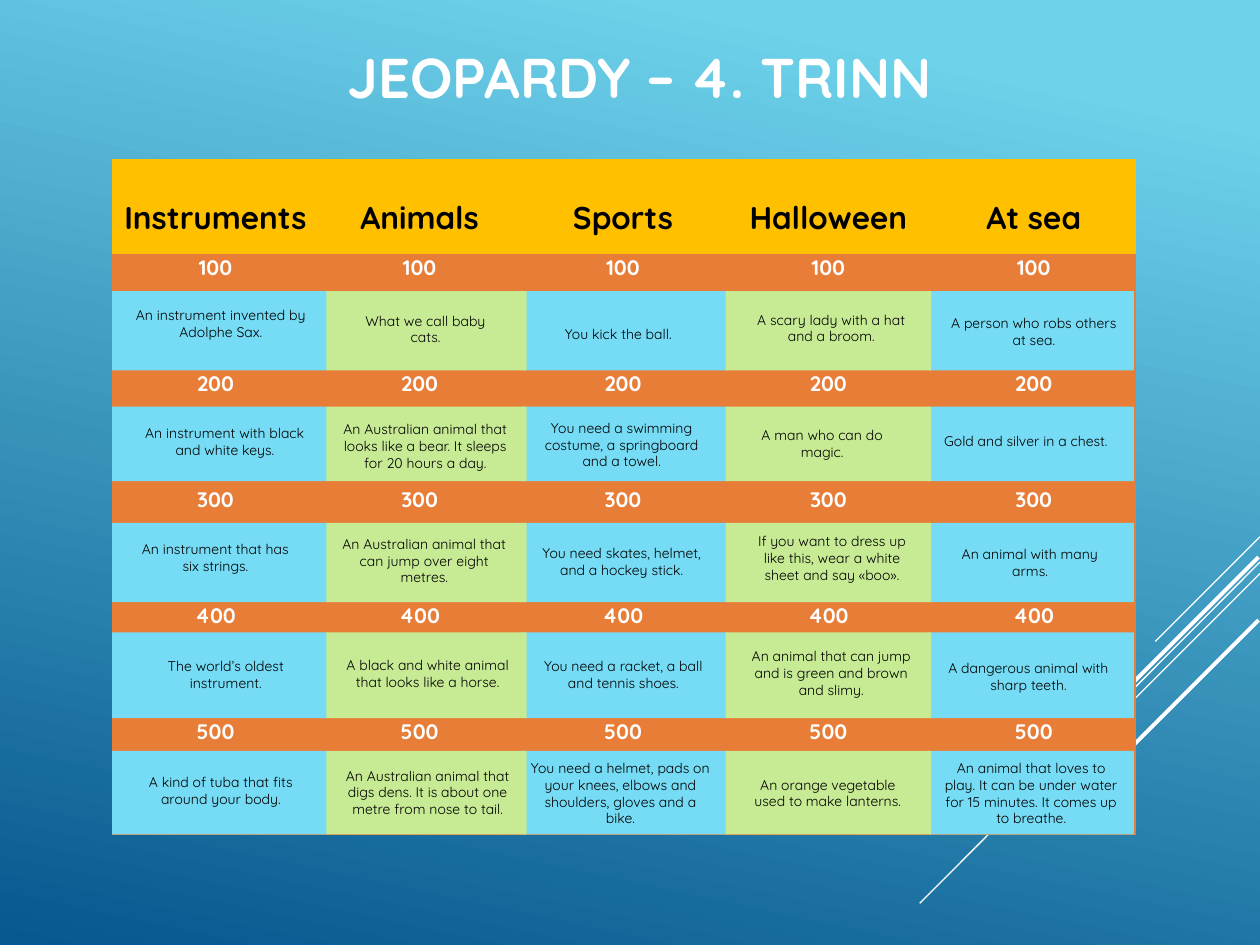
from lxml import etree
from pptx import Presentation
from pptx.dml.color import RGBColor
from pptx.enum.shapes import MSO_CONNECTOR, MSO_SHAPE
from pptx.enum.text import MSO_ANCHOR, MSO_AUTO_SIZE, PP_ALIGN
from pptx.oxml.ns import qn
from pptx.util import Cm, Pt

RECTANGLE = MSO_SHAPE.RECTANGLE
STRAIGHT = MSO_CONNECTOR.STRAIGHT
CENTER = PP_ALIGN.CENTER
MIDDLE = MSO_ANCHOR.MIDDLE
GROW = MSO_AUTO_SIZE.SHAPE_TO_FIT_TEXT

WHITE = RGBColor(0xFF, 0xFF, 0xFF)
BLACK = RGBColor(0x00, 0x00, 0x00)
SKY = RGBColor(0x6E, 0xD2, 0xEB)
DEEP_BLUE = RGBColor(0x06, 0x58, 0x8E)
YELLOW = RGBColor(0xFF, 0xC0, 0x00)
ORANGE = RGBColor(0xE8, 0x7D, 0x37)
CYAN = RGBColor(0x76, 0xDB, 0xF4)
GREEN = RGBColor(0xC7, 0xEA, 0x94)

FONT = "Quicksand"
PLAIN_TABLE_STYLE = "{2D5ABB26-0587-4C30-8999-92F81FD0307C}"

# Diagonal streaks: x1, y1, x2, y2 in cm, width in points
STREAKS = [
    (25.4, 10.82, 23.29, 12.93, 0.75),
    (25.4, 11.33, 18.54, 18.21, 0.75),
    (25.4, 11.56, 21.03, 15.93, 0.75),
    (25.37, 11.23, 21.39, 15.21, 2.25),
    (25.37, 12.5, 22.48, 15.39, 2.25),
]

POINTS = ["100", "200", "300", "400", "500"]
TABLE_COLUMNS = [4.17, 4.06, 4.14, 4.14, 4.14]
TABLE_ROWS = [1.93] + [2.34] * len(POINTS)

# Top and height of the cards for each number of points
CARD_ROWS = [(5.87, 1.6), (8.2, 1.5), (10.54, 1.6), (12.75, 1.73), (15.14, 1.68)]

# Category: card left, card width, card colour,
# clues as (left, top, width, number of lines, text)
CATEGORIES = {
    "Instruments": (2.26, 4.34, CYAN, [
        (2.36, 6.05, 4.19, 2, "An instrument invented by Adolphe Sax."),
        (2.44, 8.43, 4.19, 2, "An instrument with black and white keys."),
        (2.44, 10.77, 3.81, 2, "An instrument that has six strings."),
        (2.46, 13.13, 4.19, 2, "The world’s oldest instrument."),
        (2.36, 15.47, 4.19, 2, "A kind of tuba that fits around your body."),
    ]),
    "Animals": (6.58, 4.04, GREEN, [
        (6.88, 6.17, 3.4, 2, "What we call baby cats."),
        (6.48, 8.36, 4.19, 3, "An Australian animal that looks like a bear. "
                              "It sleeps for 20 hours a day."),
        (6.5, 10.67, 4.11, 3, "An Australian animal that can jump over eight metres."),
        (6.53, 13.11, 4.19, 2, "A black and white animal that looks like a horse."),
        (6.53, 15.34, 4.19, 3, "An Australian animal that digs dens. "
                               "It is about one metre from nose to tail."),
    ]),
    "Sports": (10.52, 4.14, CYAN, [
        (10.46, 6.43, 4.01, 1, "You kick the ball."),
        (10.49, 8.33, 4.09, 3, "You need a swimming costume, a springboard and a towel."),
        (10.44, 10.85, 4.19, 2, "You need skates, helmet, and a hockey stick."),
        (10.54, 13.13, 4.06, 2, "You need a racket, a ball and tennis shoes."),
        (10.44, 15.19, 4.14, 4, "You need a helmet, pads on your knees, elbows "
                                "and shoulders, gloves and a bike."),
    ]),
    "Halloween": (14.63, 4.14, GREEN, [
        (14.83, 6.15, 3.86, 2, "A scary lady with a hat and a broom."),
        (14.71, 8.48, 3.73, 2, "A man who can do magic."),
        (14.78, 10.62, 3.99, 3, "If you want to dress up like this, "
                                "wear a white sheet and say «boo»."),
        (14.83, 12.93, 3.86, 3, "An animal that can jump and is green and brown and slimy."),
        (14.76, 15.52, 3.86, 2, "An orange vegetable used to make lanterns."),
    ]),
    "At sea": (18.72, 4.14, CYAN, [
        (18.85, 6.22, 3.99, 2, "A person who robs others at sea."),
        (18.59, 8.59, 4.19, 1, "Gold and silver in a chest."),
        (18.77, 10.87, 3.99, 2, "An animal with many arms."),
        (18.69, 13.18, 4.09, 2, "A dangerous animal with sharp teeth."),
        (18.72, 15.19, 4.14, 4, "An animal that loves to play. It can be under water "
                                "for 15 minutes. It comes up to breathe."),
    ]),
}


class Board:
    """Holds the slide and the style shared by its elements."""

    def __init__(self, slide):
        self.slide = slide
        self.shapes = slide.shapes

    def set_text(self, frame, text, size, color, bold=False):
        frame.text = text
        paragraph = frame.paragraphs[0]
        paragraph.alignment = CENTER
        font = paragraph.font
        font.name, font.size, font.bold = FONT, Pt(size), bold
        font.color.rgb = color

    def background(self, start, end, angle):
        fill = self.slide.background.fill
        fill.gradient()
        fill.gradient_angle = angle
        for stop, position, color in zip(fill.gradient_stops, (0.1, 1), (start, end)):
            stop.position = position
            stop.color.rgb = color

    def title(self, text, left, top, width, height):
        title = self.shapes.title
        title.left, title.top = Cm(left), Cm(top)
        title.width, title.height = Cm(width), Cm(height)
        title.text_frame.vertical_anchor = MIDDLE
        self.set_text(title.text_frame, text, 32, WHITE, bold=True)

    def streak(self, x1, y1, x2, y2, weight):
        streak = self.shapes.add_connector(STRAIGHT, Cm(x1), Cm(y1), Cm(x2), Cm(y2))
        streak.line.color.rgb = WHITE
        streak.line.width = Pt(weight)
        etree.SubElement(streak._element.spPr, qn("a:effectLst"))

    def grid(self, left, top, headings, points):
        table = self.shapes.add_table(
            len(TABLE_ROWS), len(TABLE_COLUMNS), Cm(left), Cm(top),
            Cm(sum(TABLE_COLUMNS)), Cm(sum(TABLE_ROWS))).table
        table.horz_banding = False
        table._tbl.tblPr.find(qn("a:tableStyleId")).text = PLAIN_TABLE_STYLE
        for column, width in zip(table.columns, TABLE_COLUMNS):
            column.width = Cm(width)
        for row, height in zip(table.rows, TABLE_ROWS):
            row.height = Cm(height)
        for c, heading in enumerate(headings):
            self.cell(table.cell(0, c), heading, 18, BLACK, YELLOW, margin_top=0.79)
            for r, value in enumerate(points, start=1):
                self.cell(table.cell(r, c), value, 12, WHITE, ORANGE)

    def cell(self, cell, text, size, color, fill, margin_top=0):
        cell.margin_left = cell.margin_right = cell.margin_bottom = 0
        cell.margin_top = Cm(margin_top)
        cell.fill.solid()
        cell.fill.fore_color.rgb = fill
        self.set_text(cell.text_frame, text, size, color, bold=True)

    def card(self, left, top, width, height, color):
        card = self.shapes.add_shape(RECTANGLE, Cm(left), Cm(top), Cm(width), Cm(height))
        card.shadow.inherit = False
        card.fill.solid()
        card.fill.fore_color.rgb = color
        card.line.fill.background()

    def clue(self, left, top, width, lines, text):
        height = 0.25 + 0.34 * lines
        frame = self.shapes.add_textbox(
            Cm(left), Cm(top), Cm(width), Cm(height)).text_frame
        frame.word_wrap = True
        frame.auto_size = GROW
        self.set_text(frame, text, 8, BLACK)


def main():
    presentation = Presentation()
    presentation.slide_width, presentation.slide_height = Cm(25.4), Cm(19.05)
    board = Board(presentation.slides.add_slide(presentation.slide_layouts[5]))

    # Backdrop and title
    board.background(SKY, DEEP_BLUE, angle=258)
    for streak in STREAKS:
        board.streak(*streak)
    board.title("JEOPARDY – 4. TRINN", 3, 0.25, 19.79, 2.57)

    # Categories and points
    board.grid(2.26, 3.2, CATEGORIES, POINTS)

    # Clue cards, the green columns over the blue ones
    for layer in (CYAN, GREEN):
        for left, width, color, clues in CATEGORIES.values():
            if color != layer:
                continue
            for (top, height), clue in zip(CARD_ROWS, clues):
                board.card(left, top, width, height, color)
                board.clue(*clue)

    presentation.save("out.pptx")


if __name__ == "__main__":
    main()
